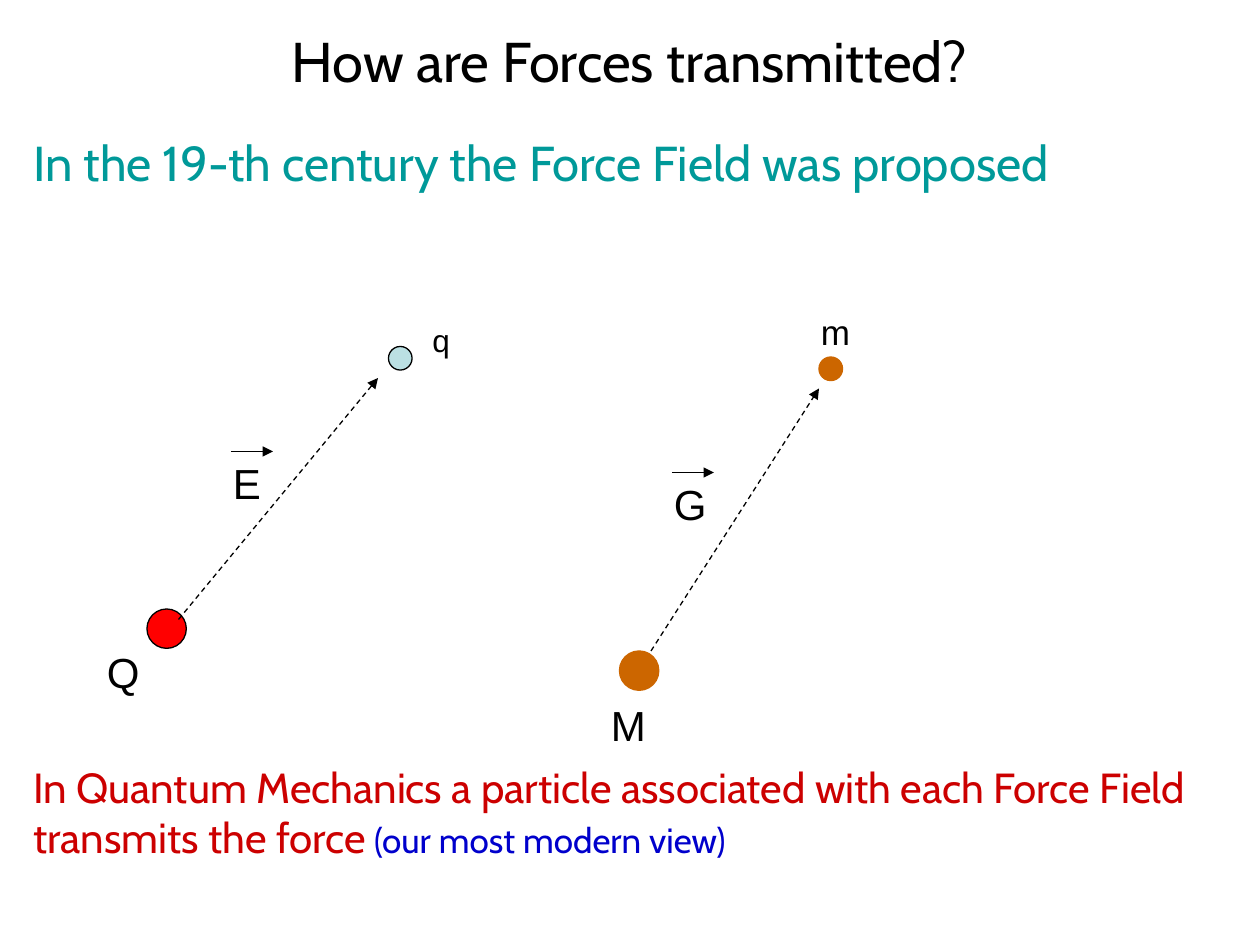
"""Builds a slide on how forces are transmitted through electric and gravity fields."""
from dataclasses import dataclass

from lxml import etree
from pptx import Presentation
from pptx.dml.color import RGBColor
from pptx.enum.dml import MSO_LINE
from pptx.enum.shapes import MSO_CONNECTOR, MSO_SHAPE
from pptx.enum.text import MSO_ANCHOR, PP_ALIGN
from pptx.oxml.ns import qn
from pptx.slide import Slide
from pptx.util import Inches, Pt

STRAIGHT = MSO_CONNECTOR.STRAIGHT
OVAL = MSO_SHAPE.OVAL
RECTANGLE = MSO_SHAPE.RECTANGLE
DASH = MSO_LINE.DASH
MIDDLE = MSO_ANCHOR.MIDDLE
TOP = MSO_ANCHOR.TOP
CENTER = PP_ALIGN.CENTER
LEFT = PP_ALIGN.LEFT

BLACK = RGBColor(0x00, 0x00, 0x00)
WHITE = RGBColor(0xFF, 0xFF, 0xFF)
TEAL = RGBColor(0x00, 0x99, 0x99)
RED = RGBColor(0xFF, 0x00, 0x00)
PALE_BLUE = RGBColor(0xBB, 0xE0, 0xE3)
ORANGE = RGBColor(0xCC, 0x66, 0x00)
DARK_RED = RGBColor(0xCC, 0x00, 0x00)
BLUE = RGBColor(0x00, 0x00, 0xCC)

TITLE_ONLY = 5
CELLS_PER_INCH = 12
SOURCE_SIZE = 3.75
TEST_SIZE = 2.25


def cells(*counts):
    """Turn grid columns or rows into lengths."""
    return [Inches(count / CELLS_PER_INCH) for count in counts]


@dataclass
class FieldSlide:
    """Holds the style and the current slide; places are grid columns and rows."""

    slide: Slide
    text_font: str = "Cabin"
    label_font: str = "Arial"
    line_width: float = 0.75

    def style_font(self, font, name, size, color):
        font.name = name
        font.size = Pt(size)
        font.color.rgb = color

    def title(self, text, *box):
        title = self.slide.shapes.title
        title.left, title.top, title.width, title.height = cells(*box)
        title.text_frame.text = text
        title.text_frame.vertical_anchor = MIDDLE
        paragraph = title.text_frame.paragraphs[0]
        paragraph.alignment = CENTER
        self.style_font(paragraph.font, self.text_font, 32, BLACK)

    def text(self, text, *box, size=24, color=BLACK, name=None):
        frame = self.slide.shapes.add_textbox(*cells(*box)).text_frame
        frame.word_wrap = True
        frame.text = text
        self.style_font(frame.paragraphs[0].font, name or self.label_font, size, color)

    def ball(self, column, row, size, fill, outline):
        ball = self.slide.shapes.add_shape(OVAL, *cells(column, row, size, size))
        ball.shadow.inherit = False
        ball.fill.solid()
        ball.fill.fore_color.rgb = fill
        ball.line.color.rgb = outline
        ball.line.width = Pt(self.line_width)

    def arrow(self, *ends, dashed=False):
        arrow = self.slide.shapes.add_connector(STRAIGHT, *cells(*ends))
        arrow.line.color.rgb = BLACK
        arrow.line.width = Pt(self.line_width)
        if dashed:
            arrow.line.dash_style = DASH
        properties = arrow.element.spPr
        etree.SubElement(properties.find(qn("a:ln")), qn("a:tailEnd"), type="triangle")
        etree.SubElement(properties, qn("a:effectLst"))

    def vector(self, letter, column, row):
        self.text(letter, column, row, 5, 6)
        self.arrow(column + 1, row, column + 5, row)

    def statement(self, parts, *box):
        panel = self.slide.shapes.add_shape(RECTANGLE, *cells(*box))
        panel.shadow.inherit = False
        panel.fill.background()
        panel.line.color.rgb = WHITE
        panel.line.width = Pt(self.line_width)
        frame = panel.text_frame
        frame.word_wrap = True
        frame.vertical_anchor = TOP
        paragraph = frame.paragraphs[0]
        paragraph.alignment = LEFT
        for text, size, color in parts:
            run = paragraph.add_run()
            run.text = text
            self.style_font(run.font, self.text_font, size, color)


def main():
    presentation = Presentation()
    presentation.slide_width, presentation.slide_height = Inches(10), Inches(7.5)
    layout = presentation.slide_layouts[TITLE_ONLY]
    page = FieldSlide(presentation.slides.add_slide(layout))

    page.title("How are Forces transmitted?", 6, 0, 108, 11.4)
    page.text("In the 19-th century the Force Field was proposed",
              2, 12, 115, 6.8, size=28, color=TEAL, name=page.text_font)

    page.ball(14, 58, SOURCE_SIZE, RED, BLACK)
    page.arrow(17, 59, 36, 36, dashed=True)
    page.ball(37, 33, TEST_SIZE, PALE_BLUE, BLACK)
    page.text("Q", 9, 61, 6, 6)
    page.text("q", 40, 30, 4, 4.8, size=18)
    page.vector("E", 21, 43)

    page.ball(59, 62, SOURCE_SIZE, ORANGE, ORANGE)
    page.ball(78, 34, TEST_SIZE, ORANGE, ORANGE)
    page.arrow(62, 62, 78, 37, dashed=True)
    page.vector("G", 63, 45)
    page.text("M", 57, 66, 7, 6)
    page.text("m", 77, 29, 6, 5.2, size=20)

    page.statement([
        ("In Quantum Mechanics a particle associated with each Force Field "
         "transmits the force", 24, DARK_RED),
        (" ", 20, DARK_RED),
        ("(our most modern view)", 20, BLUE),
    ], 2, 71.9, 118, 10.9)

    presentation.save("out.pptx")


if __name__ == "__main__":
    main()
